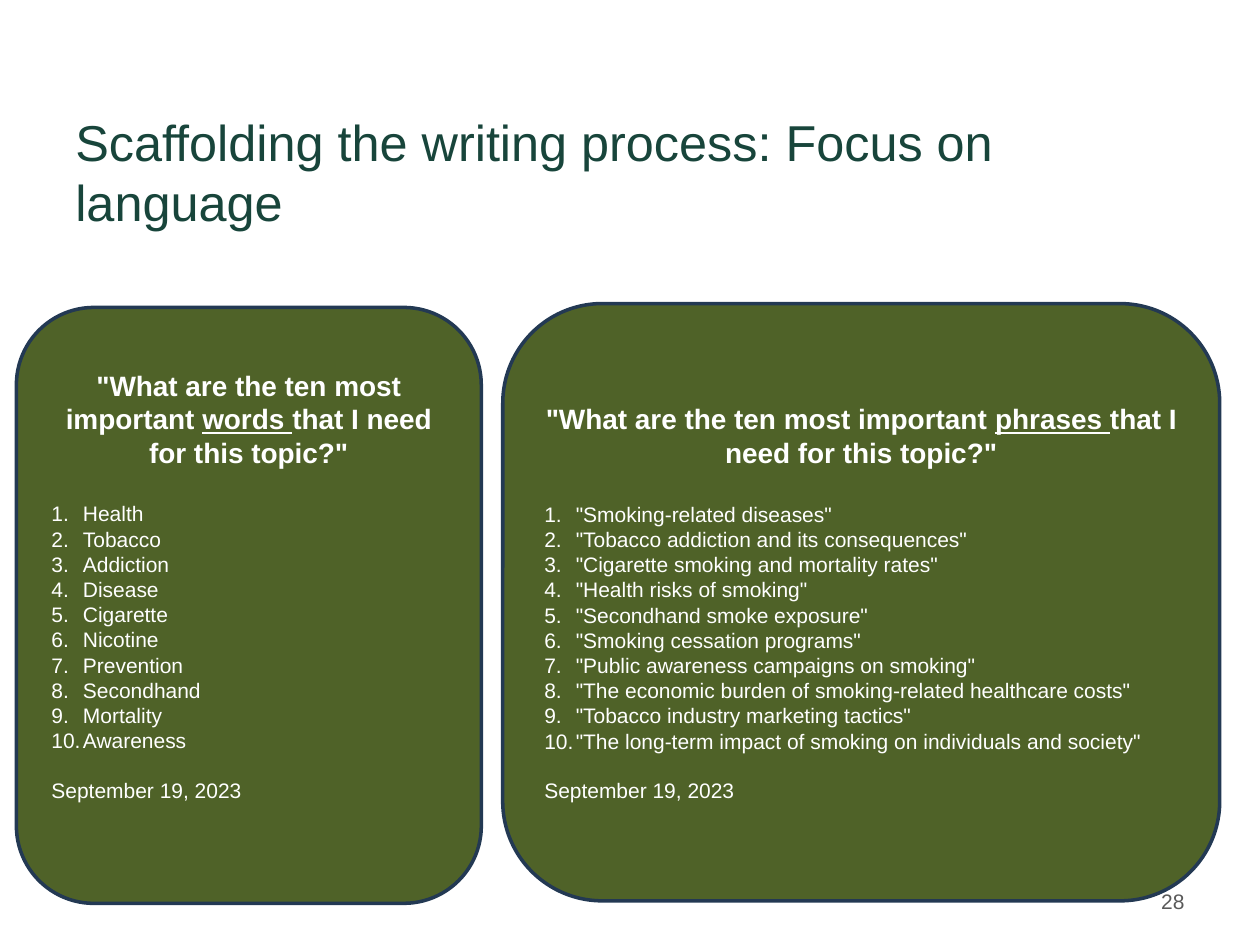
import dataclasses

import pptx
import pptx.dml.color
import pptx.enum.shapes
import pptx.enum.text
import pptx.oxml.ns
import pptx.util
from lxml import etree
from pptx.util import Inches

ALIGN = pptx.enum.text.PP_ALIGN
ANCHOR = pptx.enum.text.MSO_ANCHOR


@dataclasses.dataclass(frozen=True)
class Theme:
    font: str = "Arial"
    heading: str = "18453B"
    page: str = "595959"
    panel: str = "4F6228"
    outline: str = "233953"
    light: str = "FFFFFF"
    title_size: float = 28.8
    question_size: float = 16
    body_size: float = 12
    line_height: float = 1.15


THEME = Theme()
HANGING = Inches(0.25)
WORDS = ["Health", "Tobacco", "Addiction", "Disease", "Cigarette", "Nicotine",
         "Prevention", "Secondhand", "Mortality", "Awareness"]
PHRASES = [
    '"Smoking-related diseases"',
    '"Tobacco addiction and its consequences"',
    '"Cigarette smoking and mortality rates"',
    '"Health risks of smoking"',
    '"Secondhand smoke exposure"',
    '"Smoking cessation programs"',
    '"Public awareness campaigns on smoking"',
    '"The economic burden of smoking-related healthcare costs"',
    '"Tobacco industry marketing tactics"',
    '"The long-term impact of smoking on individuals and society"',
]


def rgb(value):
    return pptx.dml.color.RGBColor.from_string(value)


def add_text(paragraph, text, size=THEME.body_size, color=THEME.light,
             bold=False, underline=False, align=ALIGN.LEFT, before=0):
    paragraph.alignment = align
    if before:
        paragraph.space_before = pptx.util.Pt(before)
    run = paragraph.add_run()
    run.text = text
    run.font.name = THEME.font
    run.font.size = pptx.util.Pt(size)
    run.font.color.rgb = rgb(color)
    run.font.bold = bold
    run.font.underline = underline


def number_item(paragraph):
    properties = paragraph._p.get_or_add_pPr()
    properties.set("marL", str(HANGING))
    properties.set("indent", str(-HANGING))
    numbering = etree.SubElement(properties, pptx.oxml.ns.qn("a:buAutoNum"))
    numbering.set("type", "arabicPeriod")


def add_label(slide, text, left, top, width, height, anchor=ANCHOR.TOP, **text_format):
    frame = slide.shapes.add_textbox(
        Inches(left), Inches(top), Inches(width), Inches(height)).text_frame
    frame.word_wrap = True
    frame.vertical_anchor = anchor
    add_text(frame.paragraphs[0], text, **text_format)


def add_panel(slide, focus, answers, left, top, width, height, bottom_inset=0.05):
    panel = slide.shapes.add_shape(
        pptx.enum.shapes.MSO_SHAPE.ROUNDED_RECTANGLE,
        Inches(left), Inches(top), Inches(width), Inches(height))
    panel.shadow.inherit = False
    panel.fill.solid()
    panel.fill.fore_color.rgb = rgb(THEME.panel)
    panel.line.color.rgb = rgb(THEME.outline)
    panel.line.width = pptx.util.Pt(2)

    frame = panel.text_frame
    frame.word_wrap = True
    frame.vertical_anchor = ANCHOR.MIDDLE
    frame.margin_bottom = Inches(bottom_inset)

    question = frame.paragraphs[0]
    for part, underline in [('"What are the ten most important ', False),
                            (focus + " ", True),
                            ('that I need for this topic?"', False)]:
        add_text(question, part, size=THEME.question_size, bold=True,
                 underline=underline, align=ALIGN.CENTER)

    for index, answer in enumerate(answers):
        item = frame.add_paragraph()
        number_item(item)
        gap = 0 if index else THEME.question_size * THEME.line_height
        add_text(item, answer, before=gap)

    add_text(frame.add_paragraph(), "September 19, 2023",
             before=THEME.body_size * THEME.line_height)


def main():
    deck = pptx.Presentation()
    deck.slide_width, deck.slide_height = Inches(10), Inches(7.5)
    slide = deck.slides.add_slide(deck.slide_layouts[6])

    add_label(slide, "Scaffolding the writing process: Focus on language",
              0.5, 0.83, 9.17, 0.9, size=THEME.title_size, color=THEME.heading)
    add_label(slide, "28", 7.17, 6.95, 2.33, 0.4, anchor=ANCHOR.MIDDLE,
              color=THEME.page, align=ALIGN.RIGHT)
    add_panel(slide, "words", WORDS, 0.13, 2.44, 3.69, 4.73, bottom_inset=0.37)
    add_panel(slide, "phrases", PHRASES, 3.99, 2.41, 5.69, 4.74)

    deck.save("out.pptx")


if __name__ == "__main__":
    main()
